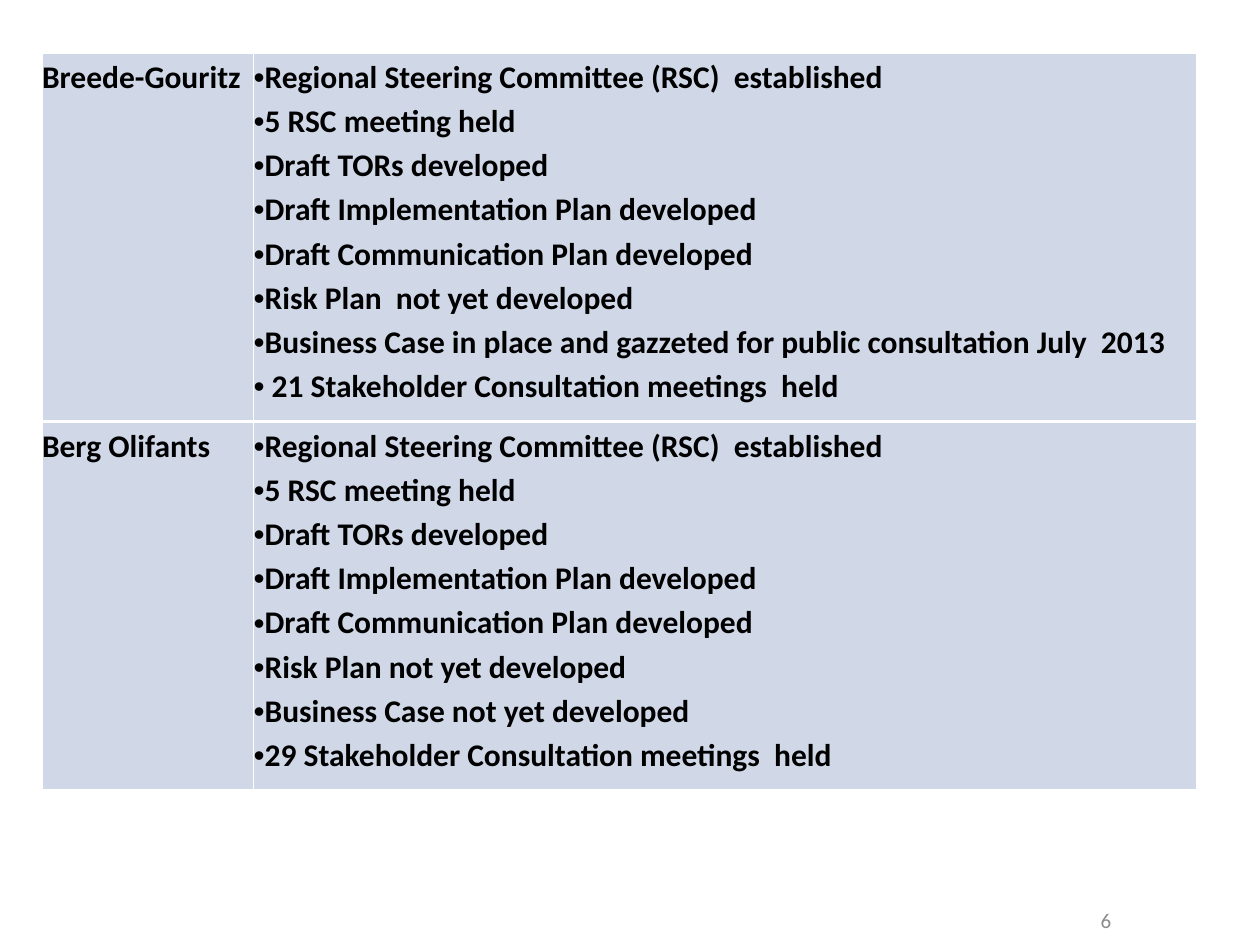
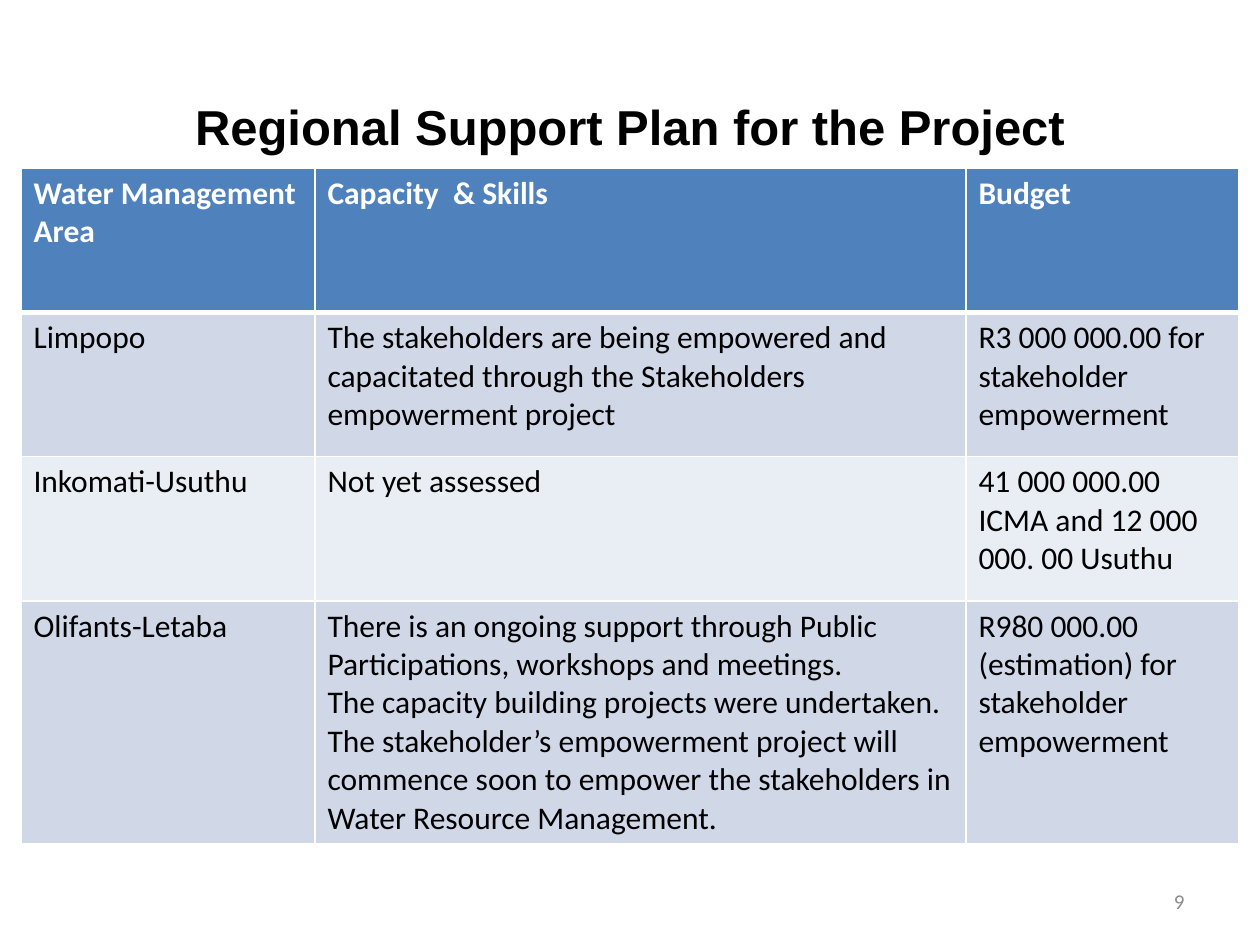
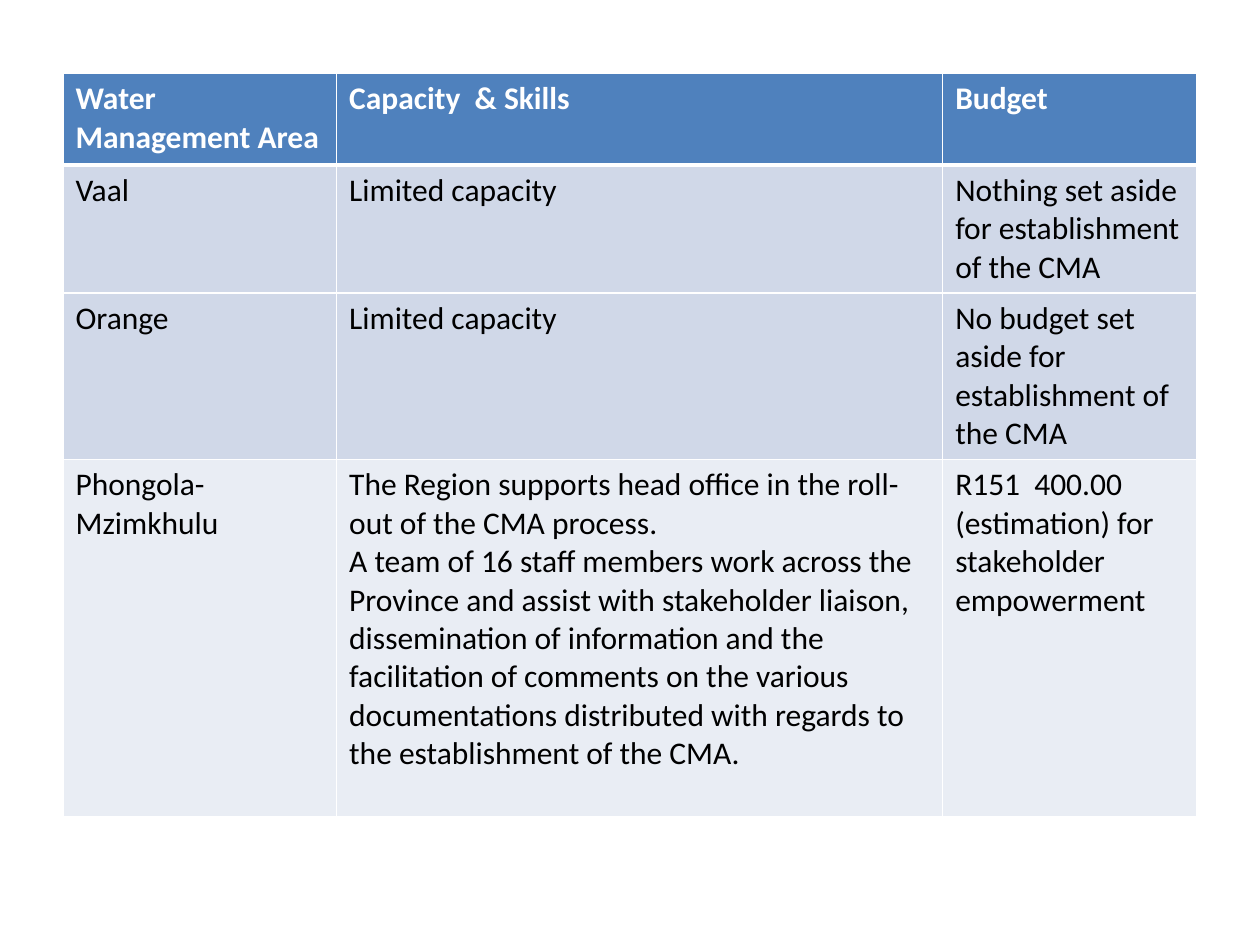
from dataclasses import dataclass

from lxml.etree import SubElement
from pptx import Presentation
from pptx.dml.color import RGBColor as RGB
from pptx.enum.text import MSO_ANCHOR as ANCHOR, PP_ALIGN as ALIGN
from pptx.oxml.ns import qn
from pptx.util import Inches, Pt

GRID_COLS, GRID_ROWS = 60, 45
TITLE_ONLY, BLANK = 5, 6


@dataclass(frozen=True)
class Theme:
    black: str = "000000"
    white: str = "FFFFFF"
    header: str = "4F81BD"
    band: str = "D0D8E8"
    light_band: str = "E9EDF4"
    page_number: str = "8C8C8C"
    title_font: str = "Arial"
    body_font: str = "Calibri"
    bullet_font: str = "Arial"
    title_size: float = 28
    body_size: float = 18
    number_size: float = 12
    rule: float = 1
    header_rule: float = 3
    row_rule: float = 2.25


class Deck:
    def __init__(self, theme):
        self.theme = theme
        self.prs = Presentation()
        self.prs.slide_width, self.prs.slide_height = Inches(10), Inches(7.5)
        self.s = None

    def x(self, cols):
        return round(self.prs.slide_width * cols / GRID_COLS)

    def y(self, rows):
        return round(self.prs.slide_height * rows / GRID_ROWS)

    def place(self, sp, left, top, width, height):
        sp.left, sp.top = self.x(left), self.y(top)
        sp.width, sp.height = self.x(width), self.y(height)

    def add_slide(self, layout=BLANK):
        self.s = self.prs.slides.add_slide(self.prs.slide_layouts[layout])

    def format_text(self, tf, size, color, bold=False, font=None, align=None):
        for p in tf.paragraphs:
            p.alignment = align
            for r in p.runs:
                r.font.name = font or self.theme.body_font
                r.font.size = Pt(size)
                r.font.bold = bold
                r.font.color.rgb = RGB.from_string(color)

    def title(self, text, *box):
        sp = self.s.shapes.title
        self.place(sp, *box)
        tf = sp.text_frame
        tf.text = text
        tf.vertical_anchor = ANCHOR.MIDDLE
        self.format_text(tf, self.theme.title_size, self.theme.black, True,
                         self.theme.title_font, ALIGN.CENTER)

    def page_number(self, number, left, top):
        sp = self.s.shapes.add_textbox(0, 0, 0, 0)
        self.place(sp, left, top, 14, 2.4)
        tf = sp.text_frame
        tf.word_wrap = True
        tf.text = str(number)
        tf.vertical_anchor = ANCHOR.MIDDLE
        self.format_text(tf, self.theme.number_size, self.theme.page_number,
                         align=ALIGN.RIGHT)

    def bullet(self, p):
        p_pr = p._p.get_or_add_pPr()
        SubElement(p_pr, qn("a:buFont"), typeface=self.theme.bullet_font)
        SubElement(p_pr, qn("a:buChar"), char="•")

    def border(self, cell, top, bottom):
        """Draw white cell borders; the side rules are always thin."""
        rule = self.theme.rule
        tc_pr = cell._tc.get_or_add_tcPr()
        for side, width in zip("LRTB", (rule, rule, top, bottom)):
            ln = SubElement(tc_pr, qn(f"a:ln{side}"), w=str(Pt(width)))
            fill = SubElement(ln, qn("a:solidFill"))
            SubElement(fill, qn("a:srgbClr"), val=self.theme.white)

    def cell(self, cell, text, fill, color, bold, rules):
        cell.text_frame.text = text
        self.border(cell, *rules)
        cell.fill.solid()
        cell.fill.fore_color.rgb = RGB.from_string(fill)
        self.format_text(cell.text_frame, self.theme.body_size, color, bold)

    def grid_table(self, left, top, widths, heights):
        frame = self.s.shapes.add_table(
            len(heights), len(widths), self.x(left), self.y(top),
            self.x(sum(widths)), self.y(sum(heights)))
        table = frame.table
        table.horz_banding = False
        for column, width in zip(table.columns, widths):
            column.width = self.x(width)
        for row, height in zip(table.rows, heights):
            row.height = self.y(height)
        return table

    def progress_table(self, areas, left, top, widths, row_height):
        """Show each area beside its bulleted progress, without cell margins."""
        t = self.theme
        table = self.grid_table(left, top, widths, [row_height] * len(areas))
        table.first_row = False
        for row, (area, steps) in zip(table.rows, areas.items()):
            for cell, text in zip(row.cells, (area, "\n".join(steps))):
                self.cell(cell, text, t.band, t.black, True, (t.row_rule, t.row_rule))
                cell.margin_left = cell.margin_right = 0
                cell.margin_top = cell.margin_bottom = 0
                for p in cell.text_frame.paragraphs:
                    p.line_spacing = 1.15
            for p in row.cells[1].text_frame.paragraphs:
                self.bullet(p)

    def support_table(self, rows, fills, left, top, widths, heights):
        t = self.theme
        table = self.grid_table(left, top, widths, heights)
        content = [SUPPORT_HEADER, *rows]
        for i, (row, texts, fill) in enumerate(zip(table.rows, content, [t.header, *fills])):
            is_header = i == 0
            rules = (t.header_rule if i == 1 else t.rule,
                     t.header_rule if is_header else t.rule)
            for cell, text in zip(row.cells, texts):
                self.cell(cell, text, fill, t.white if is_header else t.black,
                          is_header, rules)


def progress_steps(risk_plan, business_case, consultation):
    return [
        "Regional Steering Committee (RSC)  established",
        "5 RSC meeting held",
        "Draft TORs developed",
        "Draft Implementation Plan developed",
        "Draft Communication Plan developed",
        risk_plan,
        business_case,
        f"{consultation} Stakeholder Consultation meetings  held",
    ]


PROGRESS = {
    "Breede-Gouritz": progress_steps(
        "Risk Plan  not yet developed",
        "Business Case in place and gazzeted for public consultation July  2013",
        " 21"),
    "Berg Olifants": progress_steps(
        "Risk Plan not yet developed", "Business Case not yet developed", "29"),
}

SUPPORT_HEADER = ("Water Management Area", "Capacity  & Skills", "Budget")

NORTHERN_SUPPORT = [
    ("Limpopo",
     "The stakeholders are being empowered and capacitated through the "
     "Stakeholders empowerment project",
     "R3 000 000.00 for stakeholder empowerment"),
    ("Inkomati-Usuthu", "Not yet assessed",
     "41 000 000.00 ICMA and 12 000 000. 00 Usuthu"),
    ("Olifants-Letaba",
     "There is an ongoing support through Public Participations, workshops and meetings.\n"
     "The capacity building projects were undertaken.\n"
     "The stakeholder’s empowerment project will commence soon to empower the "
     "stakeholders in Water Resource Management.",
     "R980 000.00  (estimation) for stakeholder empowerment"),
]

CENTRAL_SUPPORT = [
    ("Vaal", "Limited capacity", "Nothing set aside for establishment of the CMA"),
    ("Orange", "Limited capacity", "No budget set aside for establishment of the CMA"),
    ("Phongola-Mzimkhulu",
     "The Region supports head office in the roll-out of the CMA process.\n"
     "A team of 16 staff members work across the Province and assist with stakeholder "
     "liaison, dissemination of information and the facilitation of comments on the "
     "various documentations distributed with regards to the establishment of the CMA.",
     "R151  400.00 (estimation) for stakeholder empowerment"),
]


def main():
    theme = Theme()
    deck = Deck(theme)

    deck.add_slide()
    deck.progress_table(PROGRESS, 2, 2.5, (10.08, 44.92), 17.57)
    deck.page_number(6, 39.5, 42.6)

    deck.add_slide(TITLE_ONLY)
    deck.title("Regional Support Plan for the Project", 3, 4, 54, 4)
    deck.page_number(9, 43, 41.7)
    deck.support_table(NORTHERN_SUPPORT, (theme.band, theme.light_band, theme.band),
                       1, 8, (14, 31, 13), (6.87, 6.87, 6.87, 11.58))

    deck.add_slide()
    deck.support_table(CENTRAL_SUPPORT, (theme.band, theme.band, theme.light_band),
                       3, 3.5, (13.03, 28.86, 12.11), (4.36, 6.1, 7.92, 17.04))

    deck.prs.save("out.pptx")


if __name__ == "__main__":
    main()
